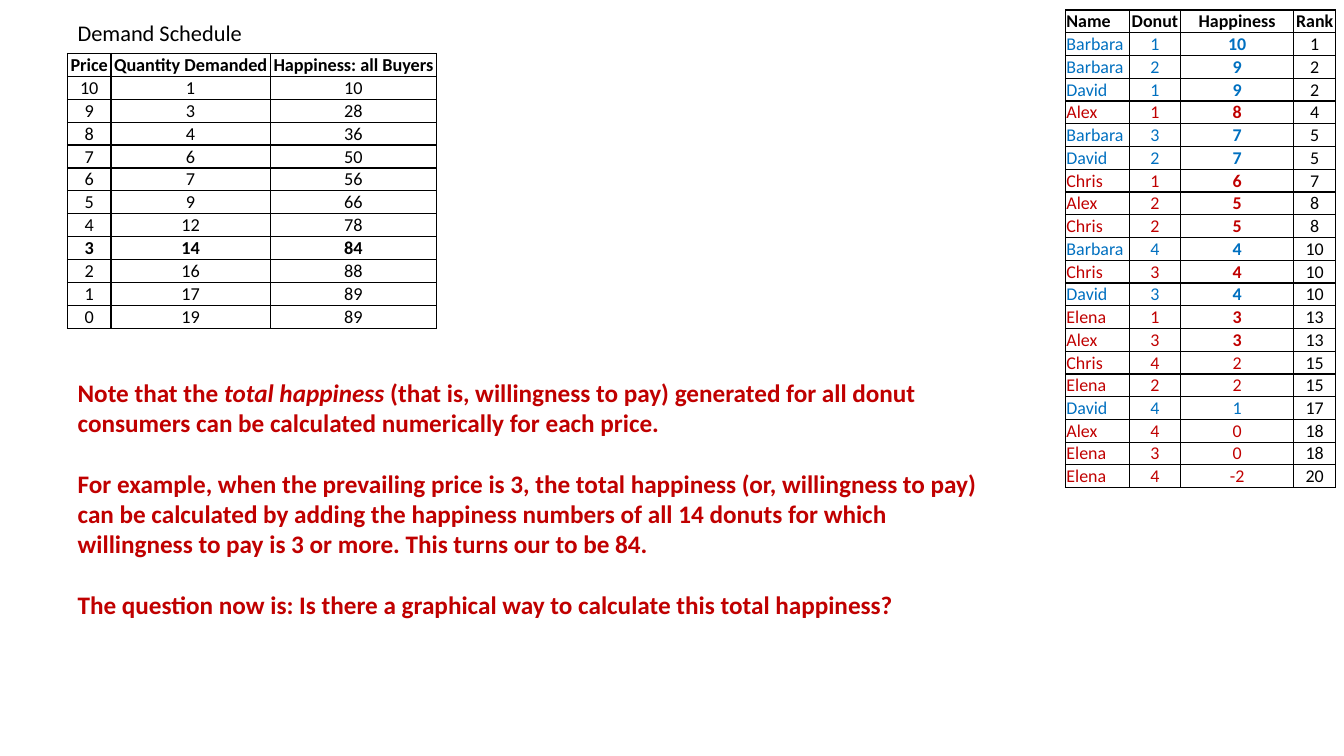
import lxml.etree
import pptx
import pptx.dml.color
import pptx.enum.text
import pptx.oxml.ns
import pptx.util

Inches = pptx.util.Inches
Pt = pptx.util.Pt
RGBColor = pptx.dml.color.RGBColor
PP_ALIGN = pptx.enum.text.PP_ALIGN
ANCHOR = pptx.enum.text.MSO_ANCHOR
qn = pptx.oxml.ns.qn

BLACK = RGBColor(0x00, 0x00, 0x00)
RED = RGBColor(0xC0, 0x00, 0x00)
BLUE = RGBColor(0x00, 0x70, 0xC0)
FONT = "Calibri"

DEMAND_HEAD = ("Price", "Quantity Demanded", "Happiness: all Buyers")
DEMAND = [
    (10, 1, 10), (9, 3, 28), (8, 4, 36), (7, 6, 50), (6, 7, 56), (5, 9, 66),
    (4, 12, 78), (3, 14, 84), (2, 16, 88), (1, 17, 89), (0, 19, 89),
]
PREVAILING_PRICE = 3

BUYER_HEAD = ("Name", "Donut", "Happiness", "Rank")
BUYERS = [
    ("Barbara", 1, 10), ("Barbara", 2, 9), ("David", 1, 9), ("Alex", 1, 8),
    ("Barbara", 3, 7), ("David", 2, 7), ("Chris", 1, 6), ("Alex", 2, 5),
    ("Chris", 2, 5), ("Barbara", 4, 4), ("Chris", 3, 4), ("David", 3, 4),
    ("Elena", 1, 3), ("Alex", 3, 3), ("Chris", 4, 2), ("Elena", 2, 2),
    ("David", 4, 1), ("Alex", 4, 0), ("Elena", 3, 0), ("Elena", 4, -2),
]
BLUE_BUYERS = ("Barbara", "David")

NOTES = [
    [("Note that the ", False), ("total happiness", True),
     (" (that is, willingness to pay) generated for all donut consumers "
      "can be calculated numerically for each price.", False)],
    [("For example, when the prevailing price is 3, the total happiness "
      "(or, willingness to pay) can be calculated by adding the happiness "
      "numbers of all 14 donuts for which willingness to pay is 3 or more. "
      "This turns our to be 84.", False)],
    [("The question now is: Is there a graphical way to calculate this "
      "total happiness?", False)],
]


def style(p, size, color, bold=False, align=PP_ALIGN.LEFT):
    p.alignment = align
    p.font.name = FONT
    p.font.size = Pt(size)
    p.font.bold = bold
    p.font.color.rgb = color


def place(sp, box):
    sp.left, sp.top, sp.width, sp.height = (Inches(v) for v in box)
    tf = sp.text_frame
    tf.word_wrap = True
    tf.auto_size = pptx.enum.text.MSO_AUTO_SIZE.NONE
    tf.vertical_anchor = ANCHOR.TOP
    return tf


def add_borders(cell):
    tc_pr = cell._tc.get_or_add_tcPr()
    for side in ("a:lnL", "a:lnR", "a:lnT", "a:lnB"):
        ln = lxml.etree.SubElement(tc_pr, qn(side), w=str(Pt(1)))
        fill = lxml.etree.SubElement(ln, qn("a:solidFill"))
        lxml.etree.SubElement(fill, qn("a:srgbClr"), val=str(BLACK))


def fill_cell(cell, text, size, color, bold, align):
    cell.margin_left = cell.margin_right = cell.margin_top = Pt(0.5)
    cell.margin_bottom = 0
    cell.vertical_anchor = ANCHOR.BOTTOM
    add_borders(cell)
    cell.fill.background()
    p = cell.text_frame.paragraphs[0]
    p.text = str(text)
    style(p, size, color, bold, align)


def add_grid(s, box, widths, rows, size, look):
    left, top, width, height = (Inches(v) for v in box)
    table = s.shapes.add_table(len(rows), len(widths), left, top, width, height).table
    table.first_row = table.horz_banding = False
    for column, w in zip(table.columns, widths):
        column.width = Inches(w)
    for i, row in enumerate(rows):
        table.rows[i].height = height // len(rows)
        for j, text in enumerate(row):
            fill_cell(table.cell(i, j), text, size, *look(i, j, row))


def demand_look(i, j, row):
    return BLACK, i == 0 or row[0] == PREVAILING_PRICE, PP_ALIGN.CENTER


def buyer_look(i, j, row):
    align = PP_ALIGN.LEFT if j == 0 else PP_ALIGN.CENTER
    if i == 0:
        return BLACK, True, align
    if j == 3:
        return BLACK, False, align
    color = BLUE if row[0] in BLUE_BUYERS else RED
    return color, j == 2 and row[2] >= PREVAILING_PRICE, align


def demand_table(s, box):
    add_grid(s, box, (0.43, 1.58, 1.65), [DEMAND_HEAD] + DEMAND, 13, demand_look)


def buyer_table(s, box):
    scores = [buyer[2] for buyer in BUYERS]
    ranked = [(*buyer, 1 + sum(score > buyer[2] for score in scores)) for buyer in BUYERS]
    add_grid(s, box, (0.63, 0.51, 1.12, 0.42), [BUYER_HEAD] + ranked, 12.8, buyer_look)


def title(s, box):
    tf = place(s.shapes.title, box)
    tf.text = "Demand Schedule"
    style(tf.paragraphs[0], 16, BLACK)


def notes(s, box):
    tf = place(s.placeholders[1], box)
    for i, parts in enumerate(NOTES):
        p = tf.paragraphs[0] if i == 0 else tf.add_paragraph()
        style(p, 18, RED, True)
        p.space_before = Pt(22 if i else 0)
        p_pr = p._p.get_or_add_pPr()
        p_pr.set("marL", "0")
        p_pr.set("indent", "0")
        p_pr.insert_element_before(
            p_pr.makeelement(qn("a:buNone")), "a:tabLst", "a:defRPr", "a:extLst")
        for text, italic in parts:
            r = p.add_run()
            r.text = text
            if italic:
                r.font.italic = True


def main():
    prs = pptx.Presentation()
    prs.slide_width = Inches(13.33)
    prs.slide_height = Inches(7.5)
    s = prs.slides.add_slide(prs.slide_layouts[1])
    title(s, (0.67, 0.14, 2.01, 0.37))
    demand_table(s, (0.67, 0.53, 3.66, 2.68))
    notes(s, (0.67, 3.69, 9.23, 2.52))
    buyer_table(s, (10.57, 0.1, 2.68, 4.7))
    prs.save("out.pptx")


if __name__ == "__main__":
    main()
